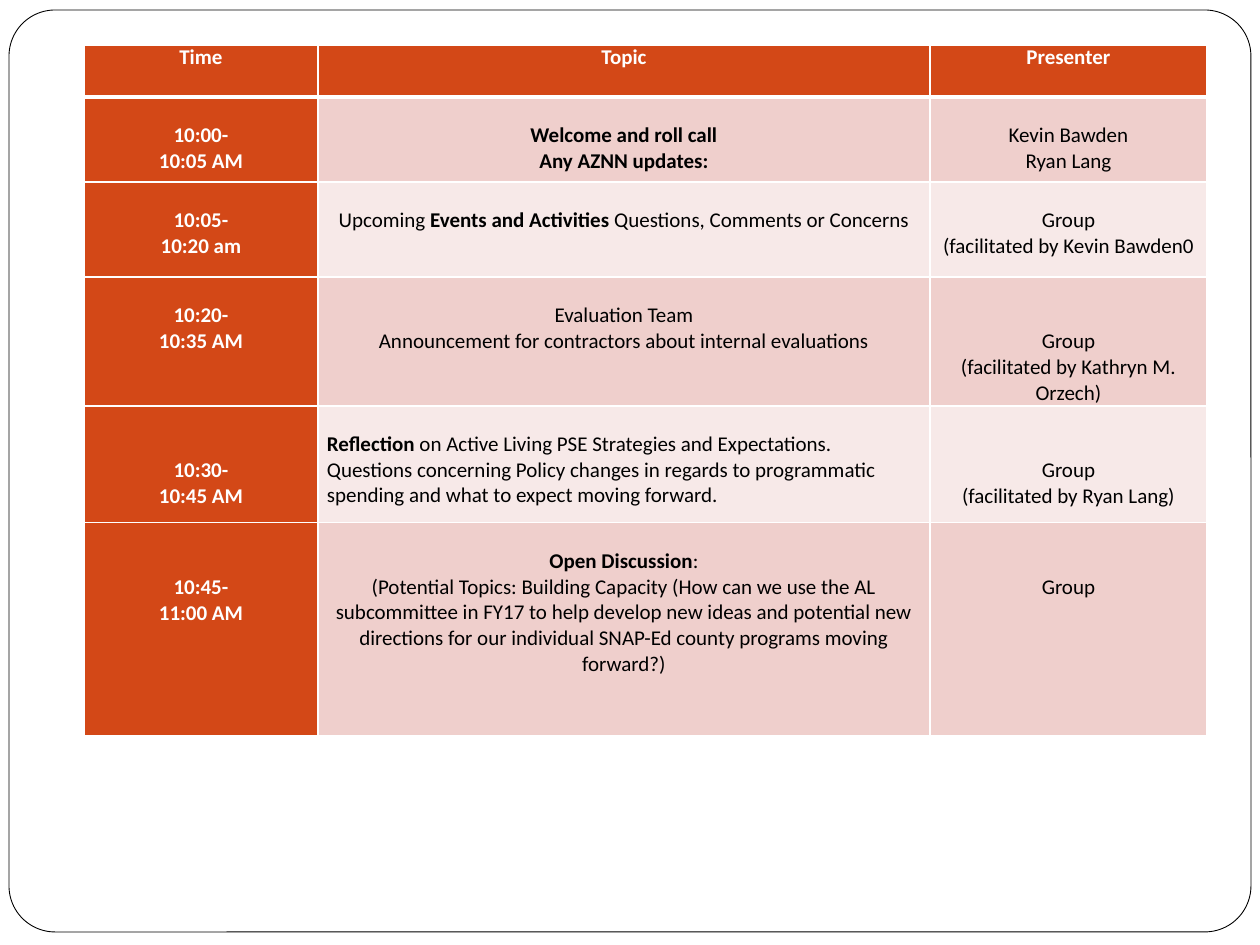
from dataclasses import dataclass
from pptx import Presentation
from pptx.dml.color import RGBColor as RGB
from pptx.enum.shapes import MSO_SHAPE as SHAPE
from pptx.enum.text import MSO_ANCHOR as ANCHOR, PP_ALIGN as ALIGN
from pptx.oxml.ns import qn
from pptx.util import Pt
from lxml.etree import SubElement as Sub


@dataclass(frozen=True)
class Theme:
    font: str = "Calibri"
    size: int = 12
    accent: str = "D34817"
    bands: tuple = ("EFCFCC", "F7E9E8")
    white: str = "FFFFFF"
    black: str = "000000"


THEME = Theme()
LINE = 26  # height of one text line, in px

HEADS = ["Time", "Topic", "Presenter"]
# Each cell: lines of space above, then its paragraphs; ** marks bold
AGENDA = [
    [(1, ["10:00-", "10:05 AM"]),
     (1, ["**Welcome and roll call**", "**Any AZNN updates:**"]),
     (1, ["Kevin Bawden", "Ryan Lang"])],
    [(1, ["10:05-", "10:20 am"]),
     (1, ["Upcoming **Events and Activities **Questions, Comments or Concerns"]),
     (1, ["Group", "(facilitated by Kevin Bawden0"])],
    [(1, ["10:20-", "10:35 AM"]),
     (1, ["Evaluation Team",
          "Announcement for contractors about internal evaluations"]),
     (2, ["Group", "(facilitated by Kathryn M. Orzech)"])],
    [(2, ["10:30-", "10:45 AM"]),
     (1, ["**Reflection **on Active Living PSE Strategies and Expectations. "
          "Questions concerning Policy changes in regards to programmatic "
          "spending and what to expect moving forward."]),
     (2, ["Group", "(facilitated by Ryan Lang)"])],
    [(2, ["10:45-", "11:00 AM"]),
     (1, ["**Open Discussion**:",
          "(Potential Topics: Building Capacity (How can we use the AL "
          "subcommittee in FY17 to help develop new ideas and potential new "
          "directions for our individual SNAP-Ed county programs moving "
          "forward?)"]),
     (2, ["Group"])],
]
LEFT = {(4, 1)}  # cells set flush left


def px(n):
    return round(n * 914400 / 126)


def put(obj, **vals):
    for key, val in vals.items():
        setattr(obj, key, val)


def tint(fill, color):
    fill.solid()
    fill.fore_color.rgb = RGB.from_string(color)


def edge(cell, base):
    """Draw the cell's borders, with the given width below it."""
    props = cell._tc.get_or_add_tcPr()
    for side, wide in zip("LRTB", (1, 1, 1, base)):
        line = Sub(props, qn(f"a:ln{side}"), w=str(Pt(wide)))
        Sub(Sub(line, qn("a:solidFill")), qn("a:srgbClr"), val=THEME.white)


def write(cell, paras, align, color, bold):
    frame = cell.text_frame
    for i, text in enumerate(paras):
        para = frame.add_paragraph() if i else frame.paragraphs[0]
        para.alignment = align
        for j, part in enumerate(text.split("**")):
            if part:
                run = para.add_run()
                run.text = part
                put(run.font, name=THEME.font, size=Pt(THEME.size),
                    bold=bold or j % 2 == 1)
                run.font.color.rgb = RGB.from_string(color)


def border(slide, x, y, w, h):
    card = slide.shapes.add_shape(SHAPE.ROUNDED_RECTANGLE,
                                  px(x), px(y), px(w), px(h))
    card.adjustments[0] = 0.05
    card.shadow.inherit = False
    tint(card.fill, THEME.white)
    tint(card.line.fill, THEME.black)
    card.line.width = Pt(0.5)


def agenda(slide, x, y, cols, rows):
    table = slide.shapes.add_table(len(rows), len(cols), px(x), px(y),
                                   px(sum(cols)), px(sum(rows))).table
    put(table, first_row=False, horz_banding=False)
    for col, wide in zip(table.columns, cols):
        col.width = px(wide)
    for row, high in zip(table.rows, rows):
        row.height = px(high)

    data = [[(0, [head]) for head in HEADS]] + AGENDA
    for r, line in enumerate(data):
        for c, (gap, paras) in enumerate(line):
            cell = table.cell(r, c)
            key = r == 0 or c == 0  # header row or time column
            edge(cell, 3 if r == 0 else 1)
            tint(cell.fill, THEME.accent if key else THEME.bands[(r - 1) % 2])
            put(cell, margin_left=px(9), margin_right=px(9),
                margin_top=px(gap * LINE), margin_bottom=0,
                vertical_anchor=ANCHOR.TOP)
            write(cell, paras, ALIGN.LEFT if (r, c) in LEFT else ALIGN.CENTER,
                  THEME.white if key else THEME.black, key)


def main():
    deck = Presentation()
    put(deck, slide_width=px(1260), slide_height=px(945))
    slide = deck.slides.add_slide(deck.slide_layouts[6])
    # Rounded frame around the page
    border(slide, 9, 10, 1242, 922)
    # Meeting agenda
    agenda(slide, 84, 45, [234, 612, 277], [52, 85, 95, 128, 117, 213])
    deck.save("out.pptx")


if __name__ == "__main__":
    main()
